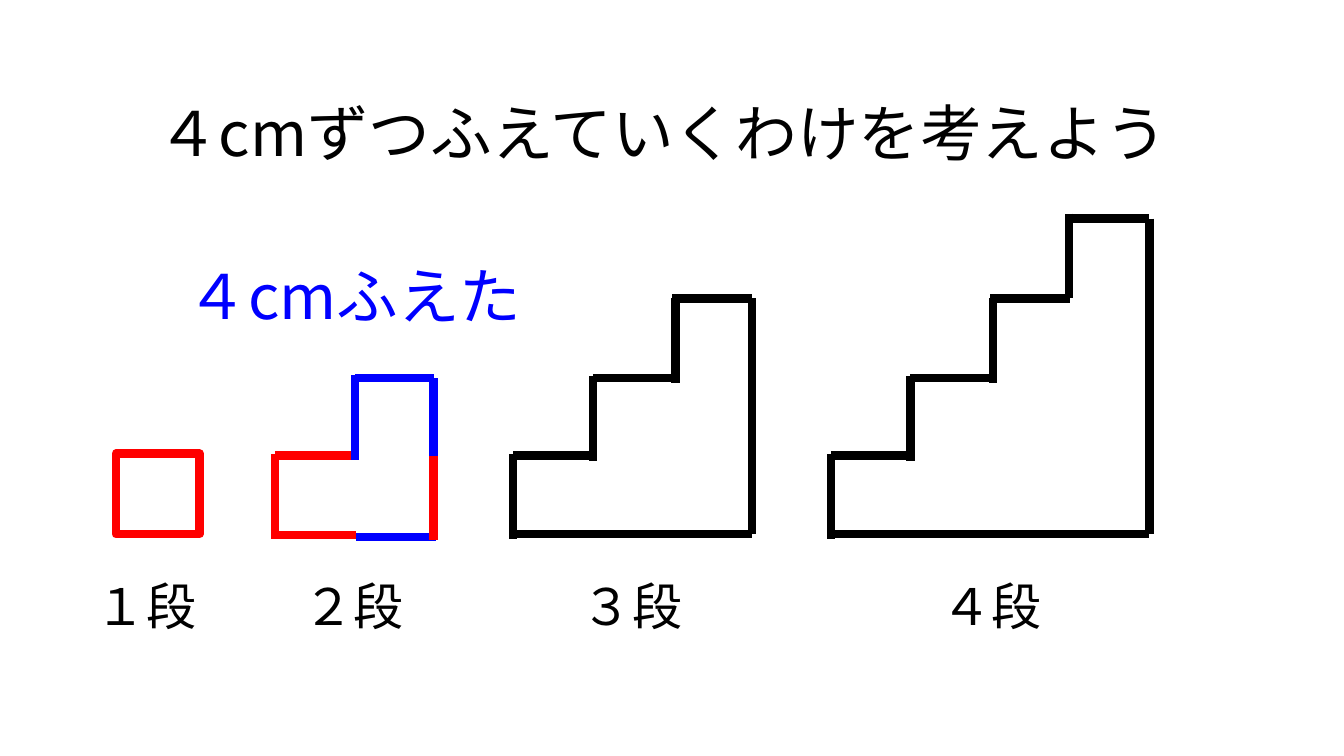
"""Build a slide of one- to four-step staircases whose perimeter grows by 4 cm."""
from lxml.etree import SubElement
from pptx import Presentation
from pptx.dml.color import RGBColor
from pptx.enum.shapes import MSO_CONNECTOR, MSO_SHAPE
from pptx.enum.text import MSO_AUTO_SIZE
from pptx.oxml.ns import qn
from pptx.util import Inches, Pt

RED = RGBColor(0xFF, 0x00, 0x00)
BLUE = RGBColor(0x00, 0x00, 0xFF)
BLACK = RGBColor(0x00, 0x00, 0x00)
FONT = "Noto Sans CJK JP"
EDGE = Pt(6)
STEP = 0.79
BASE = 5.3
TREADS = [4.52, 3.75, 2.96, 2.17]
RISERS = [(0, 4.5, 5.35), (0.79, 3.73, 4.57), (1.61, 2.96, 3.8), (2.36, 2.12, 2.96)]

prs = Presentation()
prs.slide_width, prs.slide_height = Inches(13.33), Inches(7.5)
s = prs.slides.add_slide(prs.slide_layouts[6])


def add_edge(x1, y1, x2, y2, color):
    edge = s.shapes.add_connector(
        MSO_CONNECTOR.STRAIGHT, Inches(x1), Inches(y1), Inches(x2), Inches(y2))
    edge.line.color.rgb = color
    edge.line.width = EDGE
    SubElement(edge._element.spPr, qn("a:effectLst"))


def add_text(text, x, y, w, h, size, color, wrap):
    tf = s.shapes.add_textbox(Inches(x), Inches(y), Inches(w), Inches(h)).text_frame
    tf.word_wrap = wrap
    tf.auto_size = MSO_AUTO_SIZE.SHAPE_TO_FIT_TEXT
    p = tf.paragraphs[0]
    r = p.add_run()
    r.text = text
    p.font.size = Pt(size)
    p.font.name = FONT
    p.font.color.rgb = color
    r.font.name = FONT
    SubElement(r._r.get_or_add_rPr(), qn("a:ea"), typeface=FONT)


square = s.shapes.add_shape(
    MSO_SHAPE.RECTANGLE, Inches(1.15), Inches(4.5), Inches(0.83), Inches(0.8))
square.shadow.inherit = False
square.fill.background()
square.line.color.rgb = RED
square.line.width = EDGE

two_step_edges = [
    (2.73, 4.5, 2.73, 5.35, RED),
    (4.3, 3.75, 4.3, 4.56, BLUE),
    (3.53, 5.33, 4.32, 5.33, BLUE),
    (2.73, 4.52, 3.52, 4.52, RED),
    (3.52, 3.75, 4.3, 3.75, BLUE),
    (3.52, 3.72, 3.52, 4.56, BLUE),
    (2.74, 5.31, 3.53, 5.31, RED),
    (4.3, 4.52, 4.3, 5.36, RED),
]
for edge in two_step_edges:
    add_edge(*edge, BLACK) if len(edge) == 4 else add_edge(*edge)

for steps, left in [(3, 5.09), (4, 8.24)]:
    right = left + steps * STEP
    add_edge(left, BASE, right, BASE, BLACK)
    add_edge(right, TREADS[steps - 1], right, BASE, BLACK)
    for i in range(steps):
        dx, top, bottom = RISERS[i]
        add_edge(left + i * STEP, TREADS[i], left + (i + 1) * STEP, TREADS[i], BLACK)
        add_edge(left + dx, top, left + dx, bottom, BLACK)

for label, x in [("１段", 0.85), ("２段", 2.91), ("３段", 5.67), ("４段", 9.24)]:
    add_text(label, x, 5.66, 1.21, 0.71, 36, BLACK, False)

add_text("４cmずつふえていくわけを考えよう", 1.46, 0.89, 10.34, 0.84, 44, BLACK, True)
add_text("４cmふえた", 1.75, 2.51, 3.55, 0.84, 44, BLUE, True)

prs.save("out.pptx")
